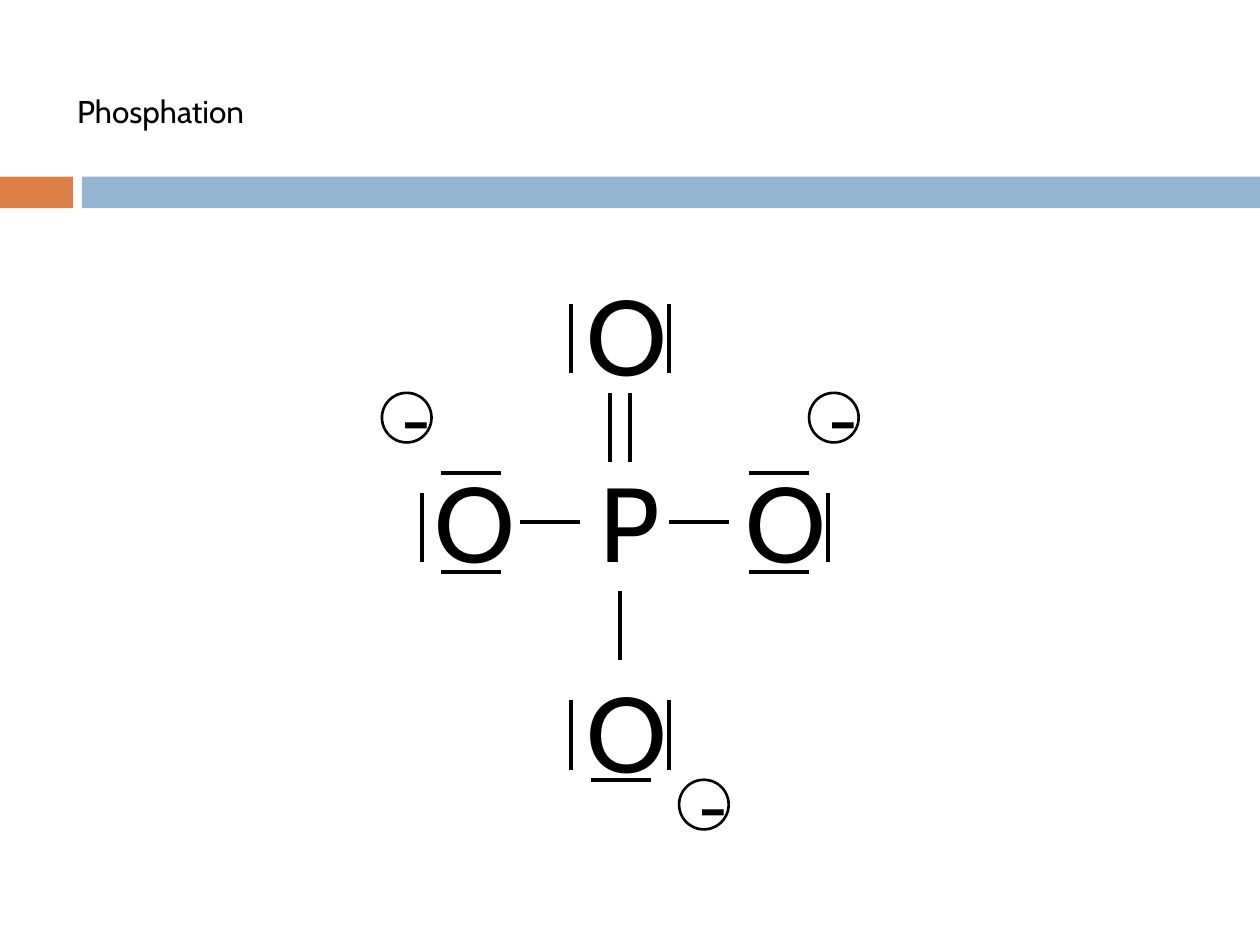
"""Build a slide with the Lewis structure of phosphate."""
import pptx
import pptx.util
import pptx.dml.color
import pptx.enum.shapes
import pptx.enum.text
import pptx.oxml.ns
import lxml.etree

Cm = pptx.util.Cm
Pt = pptx.util.Pt
Kind = pptx.enum.shapes.MSO_SHAPE
Anchor = pptx.enum.text.MSO_ANCHOR
Align = pptx.enum.text.PP_ALIGN
Fit = pptx.enum.text.MSO_AUTO_SIZE

HUES = {"ink": "000000", "paper": "FFFFFF", "accent": "DD8047", "band": "94B6D2"}
TITLE = ("Phosphation", (1.3, 1.73, 6.6, 1.02))
BARS = [("accent", 0, 1.47), ("band", 1.65, 23.75)]
ATOMS = [("P", 11.84, 9.09, 1.63), ("O", 14.78, 9.09, 1.93), ("O", 8.51, 9.09, 1.93),
         ("O", 11.58, 5.33, 1.93), ("O", 11.58, 13.34, 1.93)]
SIGNS = [(7.7, 7.92), (16.31, 7.92), (13.69, 15.72)]
BONDS = {
    (0, 1.4): [(12.29, 7.92), (12.7, 7.92), (12.5, 11.91)],
    (1.21, 0): [(10.49, 10.52), (13.49, 10.52)],
}
PAIRS = {
    (0, 1.4): [(x, y) for y in (6.12, 14.12) for x in (11.51, 13.49)]
    + [(8.51, 9.93), (16.69, 9.93)],
    (1.21, 0): [(x, y) for x in (8.89, 15.09) for y in (9.53, 11.53)] + [(11.91, 15.72)],
}


def hue(name):
    return pptx.dml.color.RGBColor.from_string(HUES[name])


def apply(item, form):
    for key, value in form.items():
        setattr(item, key, value)


def write(shape, text, size, align, form):
    frame = shape.text_frame
    apply(frame, form)
    para = frame.paragraphs[0]
    para.alignment = align
    run = para.add_run()
    run.text = text
    apply(run.font, {"name": "Cabin", "size": Pt(size)})
    run.font.color.rgb = hue("ink")


def block(shapes, kind, box, fill):
    shape = shapes.add_shape(kind, *map(Cm, box))
    shape.shadow.inherit = False
    shape.fill.solid()
    shape.fill.fore_color.rgb = hue(fill)
    return shape


def stroke(shapes, x, y, dx, dy):
    line = shapes.add_connector(pptx.enum.shapes.MSO_CONNECTOR.STRAIGHT,
                                *map(Cm, (x, y, x + dx, y + dy)))
    line.line.width = Pt(2.25)
    line.line.color.rgb = hue("ink")
    lxml.etree.SubElement(line._element.spPr, pptx.oxml.ns.qn("a:effectLst"))


def main():
    deck = pptx.Presentation()
    apply(deck, {"slide_width": Cm(25.4), "slide_height": Cm(19.05)})
    slide = deck.slides.add_slide(deck.slide_layouts[5])
    shapes = slide.shapes

    text, box = TITLE
    head = shapes.title
    apply(head, dict(zip(("left", "top", "width", "height"), map(Cm, box))))
    write(head, text, 18, Align.LEFT,
          {"word_wrap": True, "auto_size": Fit.NONE, "vertical_anchor": Anchor.TOP})

    for fill, left, width in BARS:
        block(shapes, Kind.RECTANGLE, (left, 3.56, width, 0.64), fill).line.fill.background()

    for text, left, top, width in ATOMS:
        atom = shapes.add_textbox(*map(Cm, (left, top, width, 2.82)))
        write(atom, text, 60, Align.LEFT,
              {"word_wrap": False, "auto_size": Fit.SHAPE_TO_FIT_TEXT})

    for group in (BONDS, PAIRS):
        for step, spots in group.items():
            for spot in spots:
                stroke(shapes, *spot, *step)

    for spot in SIGNS:
        ring = block(shapes, Kind.OVAL, (*spot, 1, 1), "paper")
        ring.line.width = Pt(1.5)
        ring.line.color.rgb = hue("ink")
        write(ring, "-", 40, Align.CENTER,
              {"word_wrap": True, "vertical_anchor": Anchor.MIDDLE})

    deck.save("out.pptx")


if __name__ == "__main__":
    main()
